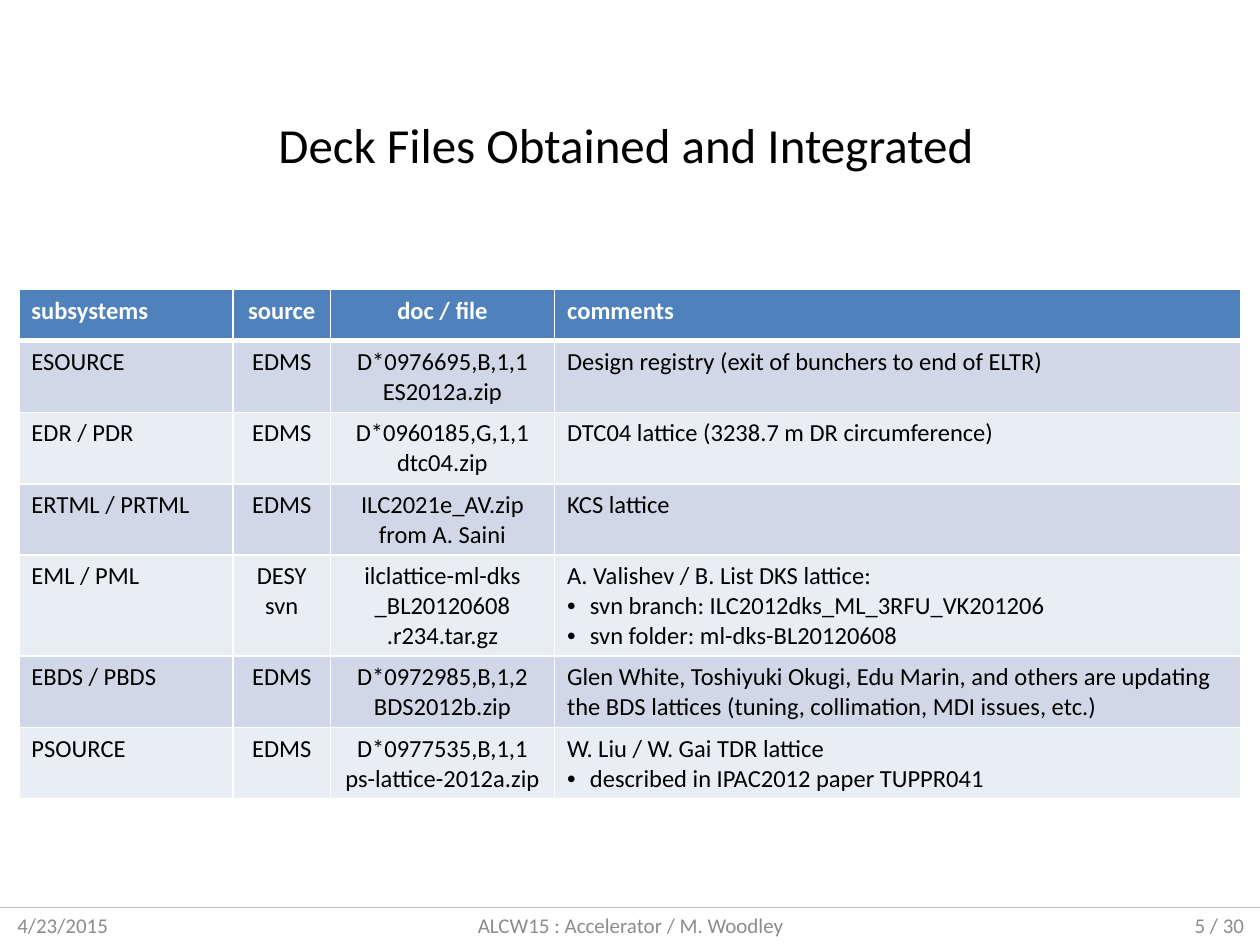
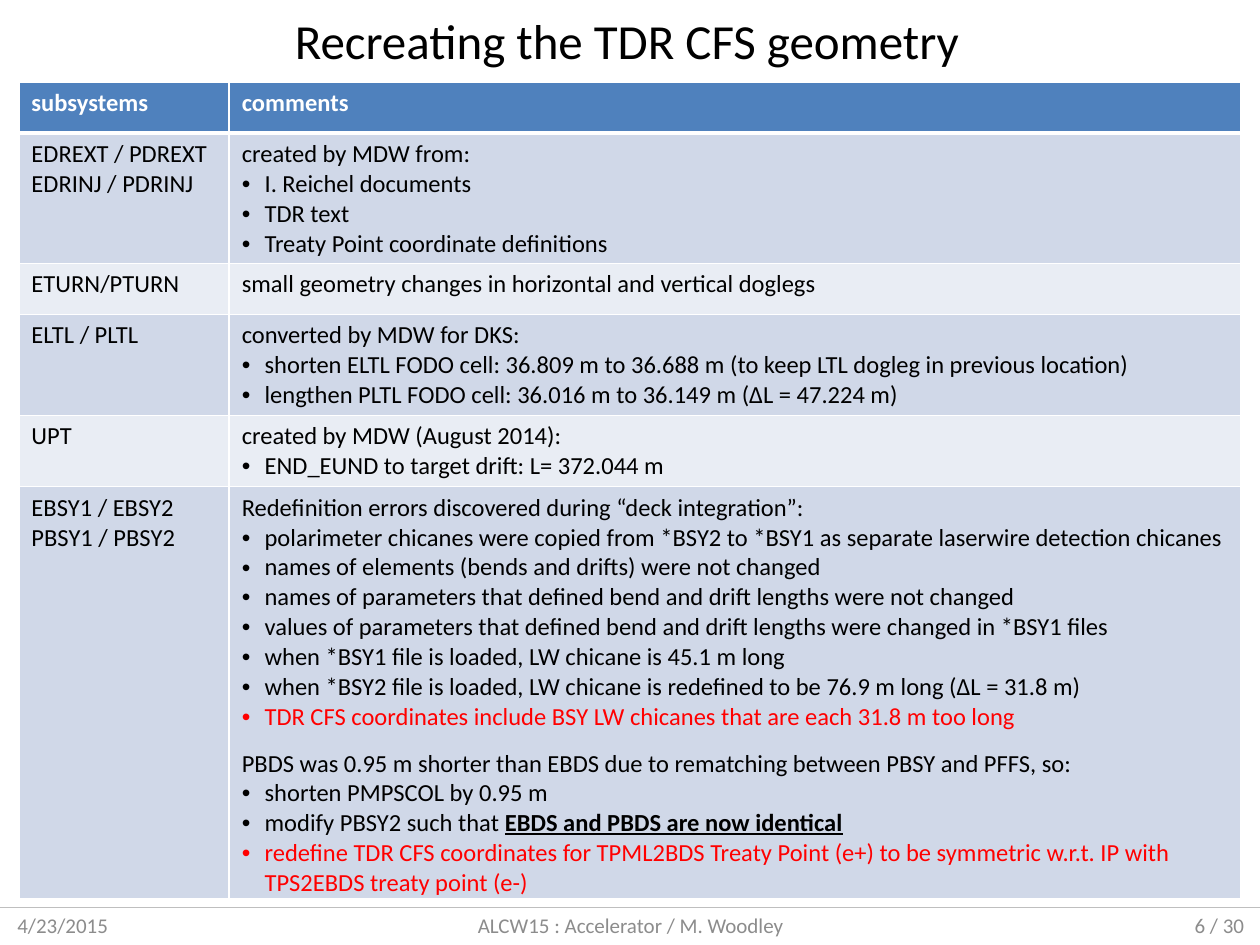
import dataclasses

import lxml.etree
import pptx
import pptx.dml.color
import pptx.enum.shapes
import pptx.enum.text
import pptx.oxml.ns
import pptx.util

Cm = pptx.util.Cm
Pt = pptx.util.Pt
qn = pptx.oxml.ns.qn
ALIGN = pptx.enum.text.PP_ALIGN
ANCHOR = pptx.enum.text.MSO_ANCHOR


@dataclasses.dataclass(frozen=True)
class Theme:
    font: str = "Calibri"
    title_size: int = 28
    table_size: int = 14
    footer_size: int = 12
    ink: str = "000000"
    white: str = "FFFFFF"
    alert: str = "FF0000"
    header: str = "4F81BD"
    bands: tuple = ("D0D8E8", "E9EDF4")
    footer_text: str = "8C8C8C"
    footer_rule: str = "BFBFBF"
    grid_line: float = 1
    header_line: float = 3
    bullet_indent: float = 0.46


@dataclasses.dataclass(frozen=True)
class Box:
    """A region in centimetres."""
    left: float
    top: float
    width: float
    height: float

    def lengths(self):
        return Cm(self.left), Cm(self.top), Cm(self.width), Cm(self.height)


@dataclasses.dataclass(frozen=True)
class Line:
    """One paragraph of a table cell; strong is an emphasised ending."""
    text: str
    bullet: bool = False
    alert: bool = False
    strong: str = ""
    space_before: float = 0


THEME = Theme()
PAGE = Box(0, 0, 25.4, 19.05)
FOOTER = Box(0, 18.29, PAGE.width, 0.76)
TABLE_LEFT, ROW_HEIGHT = 0.38, 1.03
DATE, EVENT, PAGE_TOTAL = "4/23/2015", "ALCW15 : Accelerator / M. Woodley", 30


def bullets(*texts):
    return [Line(text, bullet=True) for text in texts]


def rgb(colour):
    return pptx.dml.color.RGBColor.from_string(colour)


def style(span, size, colour, bold=False, underline=False):
    font = span.font
    font.name, font.size = THEME.font, Pt(size)
    font.bold, font.underline = bold, underline
    font.color.rgb = rgb(colour)


# Shared regions

def add_title(page, text, box):
    title = page.shapes.title
    title.left, title.top, title.width, title.height = box.lengths()
    frame = title.text_frame
    frame.text = text
    frame.word_wrap = True
    frame.auto_size = pptx.enum.text.MSO_AUTO_SIZE.NONE
    frame.vertical_anchor = ANCHOR.TOP
    para = frame.paragraphs[0]
    para.alignment = ALIGN.LEFT
    style(para.runs[0], THEME.title_size, THEME.ink)


def add_footer(page, number, box):
    rule = page.shapes.add_connector(
        pptx.enum.shapes.MSO_CONNECTOR.STRAIGHT,
        Cm(box.left), Cm(box.top), Cm(box.left + box.width), Cm(box.top))
    rule.line.color.rgb = rgb(THEME.footer_rule)
    rule.line.width = Pt(0.75)
    lxml.etree.SubElement(rule._element.spPr, qn("a:effectLst"))

    parts = [
        (DATE, 0.1, 4.55, ALIGN.LEFT),
        (EVENT, 8.69, 8.05, ALIGN.CENTER),
        (f"{number} / {PAGE_TOTAL}", 23.55, 1.78, ALIGN.RIGHT),
    ]
    for text, offset, width, alignment in parts:
        place = Box(box.left + offset, box.top + 0.05, width, 0.64)
        frame = page.shapes.add_textbox(*place.lengths()).text_frame
        frame.text = text
        frame.word_wrap = True
        frame.vertical_anchor = ANCHOR.MIDDLE
        para = frame.paragraphs[0]
        para.alignment = alignment
        style(para.runs[0], THEME.footer_size, THEME.footer_text)


# Tables

def set_borders(cell, top, bottom):
    properties = cell._tc.get_or_add_tcPr()
    widths = {"L": THEME.grid_line, "R": THEME.grid_line, "T": top, "B": bottom}
    for side, width in widths.items():
        border = lxml.etree.SubElement(properties, qn(f"a:ln{side}"), w=str(Pt(width)))
        fill = lxml.etree.SubElement(border, qn("a:solidFill"))
        lxml.etree.SubElement(fill, qn("a:srgbClr"), val=THEME.white)


def set_bullet(para):
    indent = Cm(THEME.bullet_indent)
    properties = para._p.get_or_add_pPr()
    properties.set("marL", str(indent))
    properties.set("indent", str(-indent))
    lxml.etree.SubElement(properties, qn("a:buFont"), typeface="Arial")
    lxml.etree.SubElement(properties, qn("a:buChar"), char="•")


def fill_cell(cell, content, alignment, is_header):
    lines = [Line(content)] if isinstance(content, str) else content
    frame = cell.text_frame
    for index, line in enumerate(lines):
        para = frame.add_paragraph() if index else frame.paragraphs[0]
        para.text = line.text
        para.alignment = alignment
        if line.space_before:
            para.space_before = Pt(line.space_before)
        if line.bullet:
            set_bullet(para)
        colour = THEME.white if is_header else THEME.alert if line.alert else THEME.ink
        style(para.runs[0], THEME.table_size, colour, bold=is_header)
        if line.strong:
            span = para.add_run()
            span.text = line.strong
            style(span, THEME.table_size, colour, bold=True, underline=True)


def add_subsystem_table(page, rows, widths, alignments, left, top):
    box = Box(left, top, sum(widths), ROW_HEIGHT * len(rows))
    table = page.shapes.add_table(len(rows), len(widths), *box.lengths()).table
    for column, width in zip(table.columns, widths):
        column.width = Cm(width)
    for row_index, row in enumerate(rows):
        table.rows[row_index].height = Cm(ROW_HEIGHT)
        is_header = row_index == 0
        band = THEME.header if is_header else THEME.bands[(row_index - 1) % 2]
        top_line = THEME.header_line if row_index == 1 else THEME.grid_line
        bottom_line = THEME.header_line if is_header else THEME.grid_line
        for column_index, content in enumerate(row):
            cell = table.cell(row_index, column_index)
            set_borders(cell, top_line, bottom_line)
            cell.fill.solid()
            cell.fill.fore_color.rgb = rgb(band)
            fill_cell(cell, content, alignments[column_index], is_header)


def add_table_page(deck, number, title, title_box, rows, widths, alignments, table_top):
    page = deck.slides.add_slide(deck.slide_layouts[5])
    add_footer(page, number, FOOTER)
    add_subsystem_table(page, rows, widths, alignments, TABLE_LEFT, table_top)
    add_title(page, title, title_box)


# Content

DECK_FILES = [
    ["subsystems", "source", "doc / file", "comments"],
    ["ESOURCE", "EDMS", [Line("D*0976695,B,1,1"), Line("ES2012a.zip")],
     "Design registry (exit of bunchers to end of ELTR)"],
    ["EDR / PDR", "EDMS", [Line("D*0960185,G,1,1"), Line("dtc04.zip")],
     "DTC04 lattice (3238.7 m DR circumference)"],
    ["ERTML / PRTML", "EDMS", "ILC2021e_AV.zip from A. Saini", "KCS lattice"],
    ["EML / PML", [Line("DESY"), Line("svn")],
     [Line("ilclattice-ml-dks"), Line("_BL20120608"), Line(".r234.tar.gz")],
     [Line("A. Valishev / B. List DKS lattice:"),
      *bullets("svn branch: ILC2012dks_ML_3RFU_VK201206",
               "svn folder: ml-dks-BL20120608")]],
    ["EBDS / PBDS", "EDMS", [Line("D*0972985,B,1,2"), Line("BDS2012b.zip")],
     "Glen White, Toshiyuki Okugi, Edu Marin, and others are updating "
     "the BDS lattices (tuning, collimation, MDI issues, etc.)"],
    ["PSOURCE", "EDMS", [Line("D*0977535,B,1,1"), Line("ps-lattice-2012a.zip")],
     [Line("W. Liu / W. Gai TDR lattice"),
      *bullets("described in IPAC2012 paper TUPPR041")]],
]

GEOMETRY = [
    ["subsystems", "comments"],
    [[Line("EDREXT / PDREXT"), Line("EDRINJ / PDRINJ")],
     [Line("created by MDW from:"),
      *bullets("I. Reichel documents", "TDR text",
               "Treaty Point coordinate definitions")]],
    ["ETURN/PTURN", "small geometry changes in horizontal and vertical doglegs"],
    ["ELTL / PLTL",
     [Line("converted by MDW for DKS:"),
      *bullets("shorten ELTL FODO cell: 36.809 m to 36.688 m "
               "(to keep LTL dogleg in previous location)",
               "lengthen PLTL FODO cell: 36.016 m to 36.149 m (ΔL = 47.224 m)")]],
    ["UPT",
     [Line("created by MDW (August 2014):"),
      *bullets("END_EUND to target drift: L= 372.044 m")]],
    [[Line("EBSY1 / EBSY2"), Line("PBSY1 / PBSY2")],
     [Line("Redefinition errors discovered during “deck integration”:"),
      *bullets("polarimeter chicanes were copied from *BSY2 to *BSY1 "
               "as separate laserwire detection chicanes",
               "names of elements (bends and drifts) were not changed",
               "names of parameters that defined bend and drift lengths were not changed",
               "values of parameters that defined bend and drift lengths "
               "were changed in *BSY1 files",
               "when *BSY1 file is loaded, LW chicane is 45.1 m long",
               "when *BSY2 file is loaded, LW chicane is redefined "
               "to be 76.9 m long (ΔL = 31.8 m)"),
      Line("TDR CFS coordinates include BSY LW chicanes that are each 31.8 m too long",
           bullet=True, alert=True),
      Line("PBDS was 0.95 m shorter than EBDS due to rematching "
           "between PBSY and PFFS, so:", space_before=9.8),
      *bullets("shorten PMPSCOL by 0.95 m"),
      Line("modify PBSY2 such that ", bullet=True,
           strong="EBDS and PBDS are now identical"),
      Line("redefine TDR CFS coordinates for TPML2BDS Treaty Point (e+) "
           "to be symmetric w.r.t. IP with TPS2EBDS treaty point (e-)",
           bullet=True, alert=True)]],
]


def main():
    deck = pptx.Presentation()
    deck.slide_width, deck.slide_height = Cm(PAGE.width), Cm(PAGE.height)
    add_table_page(
        deck, 5, "Deck Files Obtained and Integrated", Box(5.36, 2.18, 14.68, 1.45),
        DECK_FILES, [4.32, 1.96, 4.52, 13.84],
        [ALIGN.LEFT, ALIGN.CENTER, ALIGN.CENTER, ALIGN.LEFT], 5.84)
    add_table_page(
        deck, 6, "Recreating the TDR CFS geometry", Box(5.69, 0.08, 14.05, 1.45),
        GEOMETRY, [4.24, 20.4], [ALIGN.LEFT, ALIGN.LEFT], 1.65)
    deck.save("out.pptx")


if __name__ == "__main__":
    main()
